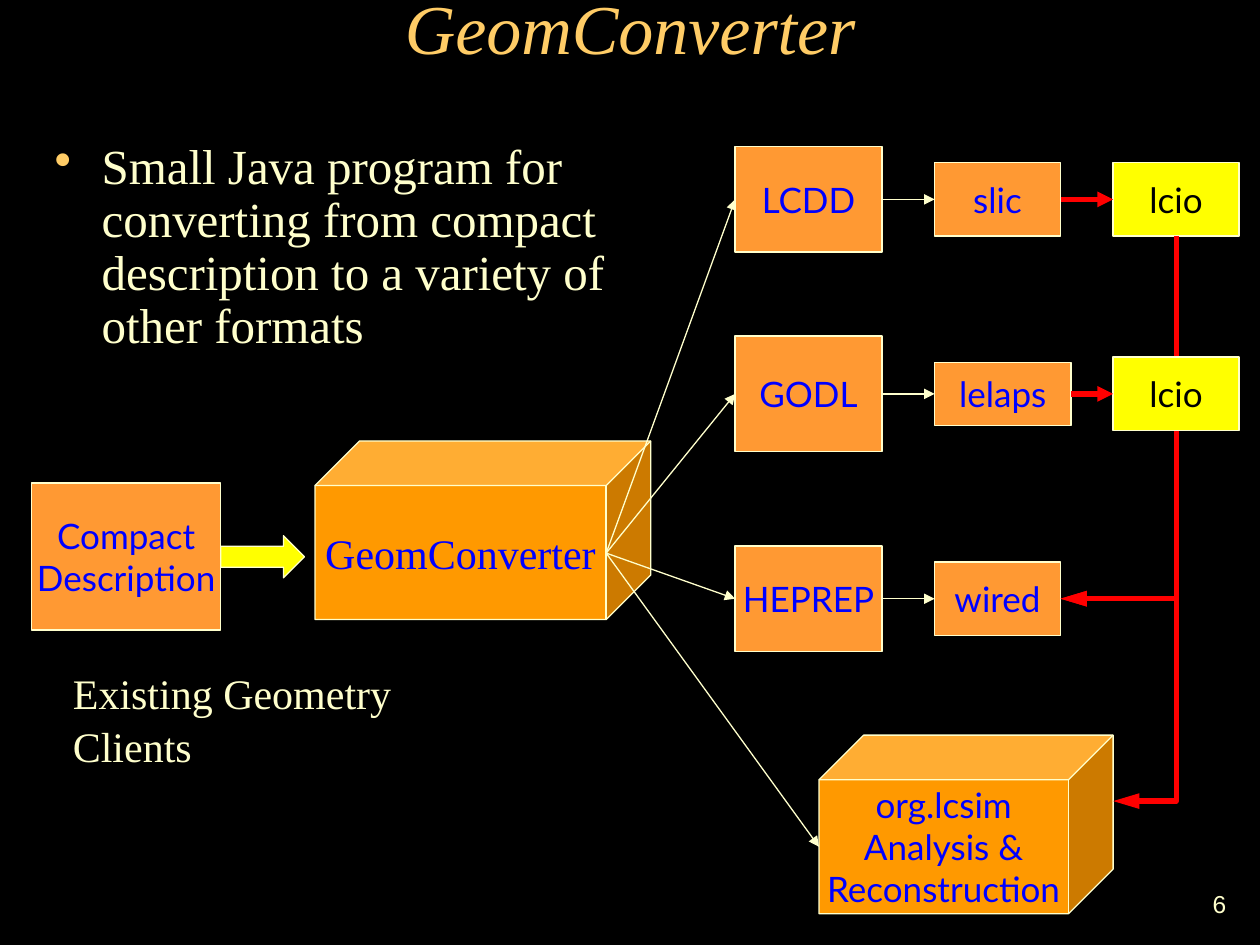
from lxml import etree
from pptx import Presentation
from pptx import util as u
from pptx.dml.color import RGBColor
from pptx.enum import shapes, text
from pptx.oxml.ns import qn

BLACK = RGBColor(0x00, 0x00, 0x00)
CREAM = RGBColor(0xFF, 0xFF, 0xCC)
GOLD = RGBColor(0xFF, 0xCC, 0x66)
ORANGE = RGBColor(0xFF, 0x99, 0x33)
DEEP_ORANGE = RGBColor(0xFF, 0x99, 0x00)
YELLOW = RGBColor(0xFF, 0xFF, 0x00)
RED = RGBColor(0xFF, 0x00, 0x00)
BLUE = RGBColor(0x00, 0x00, 0xFF)
SERIF = "Times New Roman"
SANS = "Lato"

FORMAT_LEFT, FORMAT_WIDTH = 14.82, 2.96
CLIENT_LEFT = 18.84
OUTPUT_LEFT, OUTPUT_WIDTH, OUTPUT_HEIGHT = 22.44, 2.54, 1.48
TRUNK_X = OUTPUT_LEFT + OUTPUT_WIDTH / 2
HUB = (12.22, 11.15)
LCDD_Y, GODL_Y, HEPREP_Y = 4.02, 7.94, 12.07


def write(frame, words, size=20, font=SANS, color=BLUE, align=text.PP_ALIGN.CENTER,
          anchor=text.MSO_ANCHOR.MIDDLE, italic=False, wrap=False, spacing=None,
          bullet_color=None):
    frame.word_wrap = wrap
    frame.vertical_anchor = anchor
    for index, line in enumerate(words.split("\n")):
        paragraph = frame.paragraphs[0] if index == 0 else frame.add_paragraph()
        paragraph.alignment = align
        if spacing:
            paragraph.line_spacing = spacing
        if bullet_color:
            add_bullet(paragraph, bullet_color)
        run = paragraph.add_run()
        run.text = line
        run.font.size = u.Pt(size)
        run.font.name = font
        run.font.italic = italic
        run.font.color.rgb = color


def add_bullet(paragraph, color):
    properties = paragraph._p.get_or_add_pPr()
    hang = u.Cm(0.95)
    properties.set("marL", str(hang))
    properties.set("indent", str(-hang))
    tint = etree.SubElement(properties, qn("a:buClr"))
    etree.SubElement(tint, qn("a:srgbClr"), val=str(color))
    etree.SubElement(properties, qn("a:buChar"), char="•")


def add_label(slide, words, left, top, width, height, **style):
    label = slide.shapes.add_textbox(u.Cm(left), u.Cm(top), u.Cm(width), u.Cm(height))
    write(label.text_frame, words, **style)


def add_block(slide, kind, left, top, width, height, fill, words="", **style):
    block = slide.shapes.add_shape(kind, u.Cm(left), u.Cm(top), u.Cm(width), u.Cm(height))
    block.shadow.inherit = False
    block.fill.solid()
    block.fill.fore_color.rgb = fill
    block.line.color.rgb = CREAM
    block.line.width = u.Pt(0.75)
    if words:
        write(block.text_frame, words, **style)


def add_box(slide, words, left, middle, width, height, fill=ORANGE, **style):
    add_block(slide, shapes.MSO_SHAPE.RECTANGLE, left, middle - height / 2,
              width, height, fill, words, **style)


def style_arrow(arrow, color, weight, head_length):
    arrow.line.color.rgb = color
    arrow.line.width = u.Pt(weight)
    etree.SubElement(arrow.line._get_or_add_ln(), qn("a:tailEnd"),
                     type="triangle", w="med", len=head_length)
    etree.SubElement(arrow._element.spPr, qn("a:effectLst"))


def add_arrow(slide, start, end, color=CREAM, weight=0.75):
    arrow = slide.shapes.add_connector(
        shapes.MSO_CONNECTOR.STRAIGHT, *(u.Cm(value) for value in start + end))
    style_arrow(arrow, color, weight, "med")


def add_down_left_arrow(slide, start, end):
    run, drop = start[0] - end[0], end[1] - start[1]
    left = (start[0] + end[0] - drop) / 2
    top = (start[1] + end[1] - run) / 2
    arrow = slide.shapes.add_connector(
        shapes.MSO_CONNECTOR.ELBOW, u.Cm(left), u.Cm(top), u.Cm(left + drop), u.Cm(top + run))
    properties = arrow._element.spPr
    properties.find(qn("a:xfrm")).set("rot", "5400000")
    properties.find(qn("a:prstGeom")).set("prst", "bentConnector2")
    style_arrow(arrow, RED, 3, "lg")


def add_row(slide, middle, data_format, format_height, client, client_width,
            client_height, output=None):
    add_box(slide, data_format, FORMAT_LEFT, middle, FORMAT_WIDTH, format_height)
    add_box(slide, client, CLIENT_LEFT, middle, client_width, client_height)
    add_arrow(slide, (FORMAT_LEFT + FORMAT_WIDTH, middle), (CLIENT_LEFT, middle))
    if output:
        add_box(slide, output, OUTPUT_LEFT, middle, OUTPUT_WIDTH, OUTPUT_HEIGHT,
                YELLOW, color=BLACK)
        add_arrow(slide, (CLIENT_LEFT + client_width, middle), (OUTPUT_LEFT, middle), RED, 3)


def main():
    deck = Presentation()
    deck.slide_width, deck.slide_height = u.Cm(25.4), u.Cm(19.05)
    slide = deck.slides.add_slide(deck.slide_layouts[6])
    slide.background.fill.solid()
    slide.background.fill.fore_color.rgb = BLACK

    add_label(slide, "6", 19.69, 17.58, 5.28, 1.27, size=14, font="Arial",
              color=CREAM, align=text.PP_ALIGN.RIGHT, wrap=True)
    add_label(slide, "GeomConverter", 1.91, 0.43, 21.59, 1.07, size=40, font=SERIF,
              color=GOLD, italic=True, anchor=text.MSO_ANCHOR.BOTTOM, wrap=True)
    add_label(slide, "Small Java program for converting from compact description "
              "to a variety of other formats", 0.85, 2.75, 11.85, 5.29, size=28,
              font=SERIF, color=CREAM, align=text.PP_ALIGN.LEFT,
              anchor=text.MSO_ANCHOR.TOP, wrap=True, spacing=0.9, bullet_color=GOLD)

    add_box(slide, "Compact\nDescription", 0.64, 11.22, 3.81, 2.96)
    add_block(slide, shapes.MSO_SHAPE.CUBE, 6.35, 8.89, 6.77, 3.6, DEEP_ORANGE,
              "GeomConverter", size=24, font=SERIF)
    add_block(slide, shapes.MSO_SHAPE.RIGHT_ARROW, 4.45, 10.8, 1.69, 0.85, YELLOW)
    add_block(slide, shapes.MSO_SHAPE.CUBE, 16.51, 14.82, 5.93, 3.6, DEEP_ORANGE,
              "org.lcsim\nAnalysis &\nReconstruction")
    for middle in (LCDD_Y, GODL_Y, HEPREP_Y):
        add_arrow(slide, HUB, (FORMAT_LEFT, middle))
    add_arrow(slide, HUB, (16.51, 17.07))

    add_row(slide, HEPREP_Y, "HEPREP", 2.12, "wired", 2.54, 1.48)
    add_row(slide, LCDD_Y, "LCDD", 2.12, "slic", 2.54, 1.48, "lcio")
    wired_end, analysis_end = (CLIENT_LEFT + 2.54, HEPREP_Y), (22.44, 16.15)
    for output_y, end in ((GODL_Y, wired_end), (GODL_Y, analysis_end), (LCDD_Y, wired_end)):
        add_down_left_arrow(slide, (TRUNK_X, output_y + OUTPUT_HEIGHT / 2), end)
    add_row(slide, GODL_Y, "GODL", 2.33, "lelaps", 2.75, 1.27, "lcio")

    add_label(slide, "Existing Geometry Clients", 1.22, 13.28, 9.3, 2.3, size=24,
              font=SERIF, color=CREAM, align=text.PP_ALIGN.LEFT,
              anchor=text.MSO_ANCHOR.TOP, wrap=True, spacing=1.05)
    deck.save("out.pptx")


if __name__ == "__main__":
    main()
